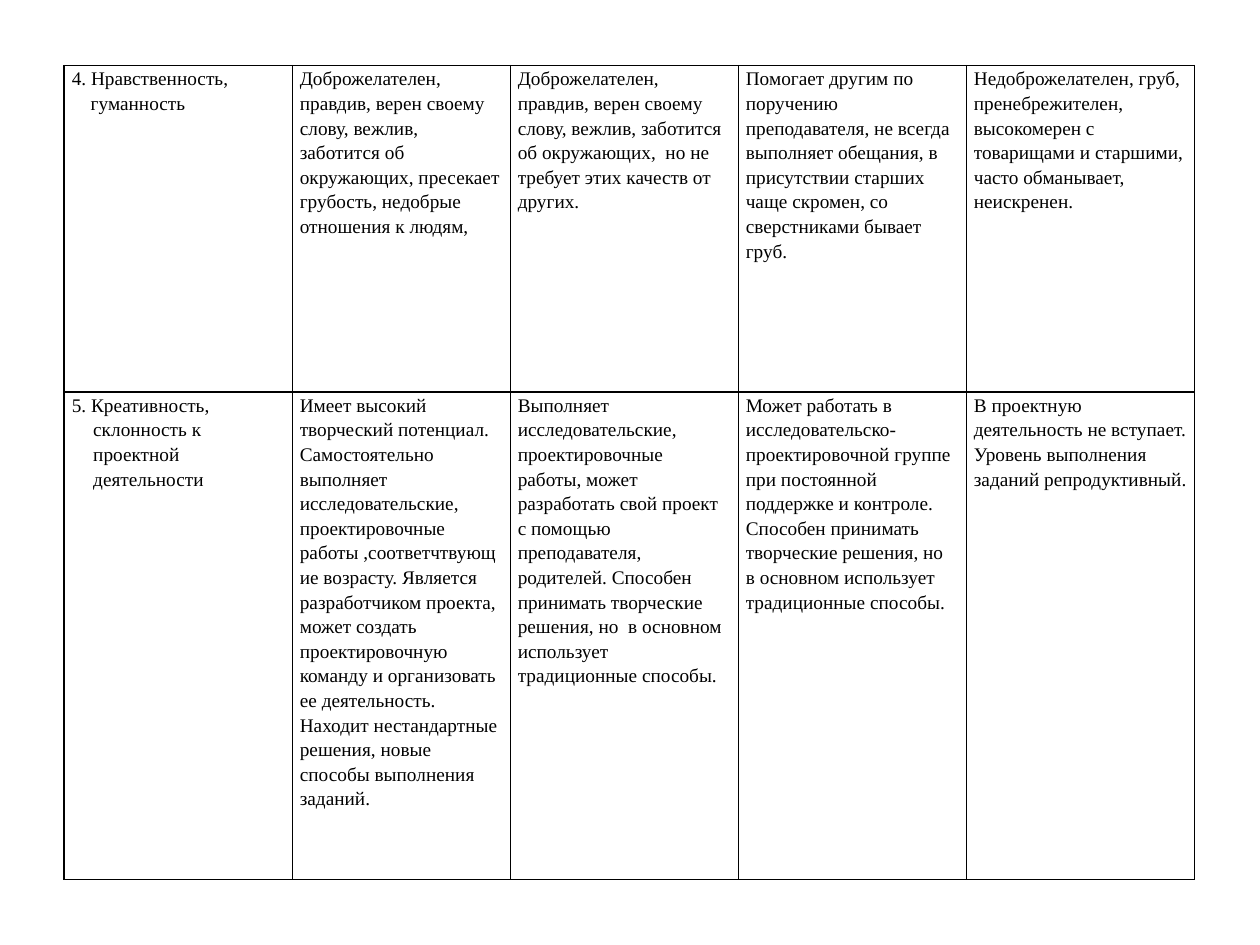
from lxml import etree
from pptx import Presentation
from pptx import util as u
from pptx.dml.color import RGBColor
from pptx.oxml.ns import qn

BLACK = RGBColor(0x00, 0x00, 0x00)
WHITE = RGBColor(0xFF, 0xFF, 0xFF)

COLUMN_WIDTHS = [1.81, 1.73, 1.81, 1.81, 1.81]
ROW_HEIGHTS = [2.59, 3.87]

# Each cell is a list of paragraphs.
CRITERIA = [
    [
        ["4. Нравственность,", "гуманность"],
        ["Доброжелателен, правдив, верен своему слову, вежлив, заботится об "
         "окружающих, пресекает грубость, недобрые отношения к людям,"],
        ["Доброжелателен, правдив, верен своему слову, вежлив, заботится об "
         "окружающих,  но не требует этих качеств от других."],
        ["Помогает другим по поручению преподавателя, не всегда выполняет "
         "обещания, в присутствии старших  чаще скромен, со сверстниками "
         "бывает груб."],
        ["Недоброжелателен, груб, пренебрежителен, высокомерен с товарищами "
         "и старшими, часто обманывает, неискренен."],
    ],
    [
        ["5. Креативность, склонность к проектной деятельности"],
        ["Имеет высокий творческий потенциал.",
         "Самостоятельно выполняет исследовательские, проектировочные работы "
         ",соответчтвующие возрасту. Является разработчиком проекта, может "
         "создать проектировочную команду и организовать ее деятельность. "
         "Находит нестандартные решения, новые способы выполнения заданий."],
        ["Выполняет исследовательские, проектировочные работы, может "
         "разработать свой проект  с помощью преподавателя, родителей. "
         "Способен принимать творческие решения, но  в основном использует "
         "традиционные способы."],
        ["Может работать в исследовательско-проектировочной группе при "
         "постоянной поддержке и контроле. Способен принимать творческие "
         "решения, но  в основном использует традиционные способы."],
        ["В проектную деятельность не вступает. Уровень выполнения заданий "
         "репродуктивный."],
    ],
]


class SlideBuilder:
    font_format = {"name": "Times New Roman", "size": u.Pt(11), "bold": False}
    cell_format = {
        "margin_left": u.Inches(0.06), "margin_right": u.Inches(0.06),
        "margin_top": 0, "margin_bottom": 0,
    }
    line_spacing = 1.15
    border_width = u.Pt(1)

    def __init__(self, slide):
        self.slide = slide

    def table(self, left, top, widths, heights, rows):
        frame = self.slide.shapes.add_table(
            len(heights), len(widths), u.Inches(left), u.Inches(top),
            u.Inches(sum(widths)), u.Inches(sum(heights)))
        grid = frame.table
        grid.first_row = grid.horz_banding = False
        for column, width in zip(grid.columns, widths):
            column.width = u.Inches(width)
        for row, height, contents in zip(grid.rows, heights, rows):
            row.height = u.Inches(height)
            for cell, paragraphs in zip(row.cells, contents):
                self.cell(cell, paragraphs)
        return grid

    def cell(self, cell, paragraphs):
        for name, value in self.cell_format.items():
            setattr(cell, name, value)
        self.borders(cell)
        cell.fill.solid()
        cell.fill.fore_color.rgb = WHITE
        cell.text = "\n".join(paragraphs)
        for paragraph in cell.text_frame.paragraphs:
            paragraph.line_spacing = self.line_spacing
            font = paragraph.runs[0].font
            for name, value in self.font_format.items():
                setattr(font, name, value)
            font.color.rgb = BLACK

    def borders(self, cell):
        properties = cell._tc.get_or_add_tcPr()
        for side in ("a:lnL", "a:lnR", "a:lnT", "a:lnB"):
            line = etree.SubElement(properties, qn(side), w=str(self.border_width))
            fill = etree.SubElement(line, qn("a:solidFill"))
            etree.SubElement(fill, qn("a:srgbClr"), val=str(BLACK))

    def indent(self, paragraph, left, first_line=0):
        properties = paragraph._p.get_or_add_pPr()
        properties.set("marL", str(u.Inches(left)))
        properties.set("indent", str(u.Inches(first_line)))


def main():
    deck = Presentation()
    deck.slide_width, deck.slide_height = u.Inches(10), u.Inches(7.5)
    builder = SlideBuilder(deck.slides.add_slide(deck.slide_layouts[6]))
    criteria = builder.table(0.51, 0.52, COLUMN_WIDTHS, ROW_HEIGHTS, CRITERIA)

    morality, creativity = (row.cells[0].text_frame for row in criteria.rows)
    builder.indent(morality.paragraphs[1], 0.15)
    builder.indent(creativity.paragraphs[0], 0.17, -0.17)
    deck.save("out.pptx")


if __name__ == "__main__":
    main()
